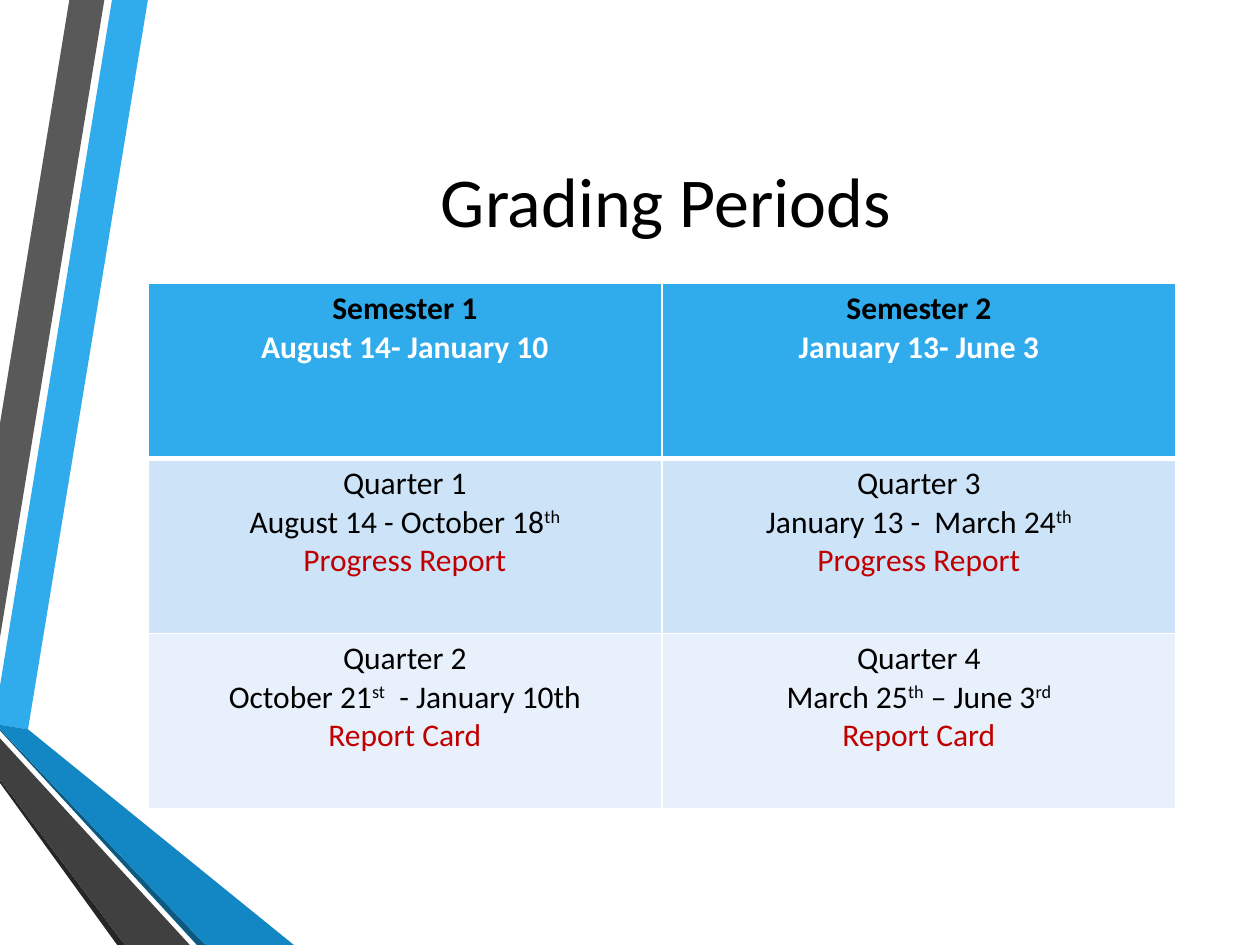
"""Build the Grading Periods slide."""
import pptx
import pptx.dml.color
import pptx.enum.text
import pptx.oxml
import pptx.oxml.ns
import pptx.util

Pt = pptx.util.Pt
COLORS = {
    "blue": "30ACEC", "grey": "595959", "black_edge": "262626",
    "blue_edge": "0C5A82", "deep_blue": "1287C3", "dark_grey": "404040",
    "pale_blue": "CDE3F8", "ice": "E8F1FB", "white": "FFFFFF",
    "black": "000000", "red": "C00000",
}
RIBBONS = [
    ("blue", [(0, 391.9), (0, 414.2), (16, 416.8), (84.5, 0), (64, 0)]),
    ("grey", [(59.6, 0), (39.6, 0), (0, 241.8), (0, 364.1)]),
    ("black_edge", [(0, 445.5), (0, 447.4), (67, 540), (71.5, 540)]),
    ("blue_edge", [(0, 416.7), (0, 417.5), (112.5, 540), (117.4, 540)]),
    ("deep_blue", [(0, 416.7), (117.4, 540), (167.9, 540), (16, 416.8), (0, 414.2)]),
    ("dark_grey", [(0, 445.5), (71.5, 540), (108.5, 540), (0, 421.9)]),
]
ROWS = [
    ("blue", True, ["black", "white"], 1, 3, [
        ["Semester 1", "August 14- January 10"],
        ["Semester 2", "January 13- June 3"]]),
    ("pale_blue", False, ["black", "black", "red"], 3, 1, [
        ["Quarter 1", "August 14 - October 18^th", "Progress Report"],
        ["Quarter 3", "January 13 -  March 24^th", "Progress Report"]]),
    ("ice", False, ["black", "black", "red"], 1, 1, [
        ["Quarter 2", "October 21^st^  - January 10th", "Report Card"],
        ["Quarter 4", "March 25^th^ – June 3^rd", "Report Card"]]),
]


def rgb(name):
    return pptx.dml.color.RGBColor.from_string(COLORS[name])


def add_text(p, text, size, color, bold=False):
    p.alignment = pptx.enum.text.PP_ALIGN.CENTER
    p.font.name = "Calibri"
    p.font.size = Pt(size)
    p.font.bold = bold
    p.font.color.rgb = rgb(color)
    for i, part in enumerate(text.split("^")):
        r = p.add_run()
        r.text = part
        if i % 2:
            r.font._element.set("baseline", "30000")


prs = pptx.Presentation()
prs.slide_width, prs.slide_height = Pt(720), Pt(540)
s = prs.slides.add_slide(prs.slide_layouts[6])

for color, points in RIBBONS:
    start, *rest = [(Pt(x), Pt(y)) for x, y in points]
    fb = s.shapes.build_freeform(*start)
    fb.add_line_segments(rest, close=True)
    sp = fb.convert_to_shape()
    sp.shadow.inherit = False
    sp.fill.solid()
    sp.fill.fore_color.rgb = rgb(color)
    sp.line.fill.background()

tf = s.shapes.add_textbox(Pt(77), Pt(36), Pt(607), Pt(156)).text_frame
tf.word_wrap = True
tf.vertical_anchor = pptx.enum.text.MSO_ANCHOR.MIDDLE
add_text(tf.paragraphs[0], "Grading Periods", 40, "black")

table = s.shapes.add_table(3, 2, Pt(84.5), Pt(162), Pt(587.5), Pt(300)).table
for i, (fill, bold, colors, top, bottom, cells) in enumerate(ROWS):
    for j, lines in enumerate(cells):
        cell = table.cell(i, j)
        tcPr = cell._tc.get_or_add_tcPr()
        for side, width in zip("LRTB", (1, 1, top, bottom)):
            tcPr.append(pptx.oxml.parse_xml(
                f'<a:ln{side} {pptx.oxml.ns.nsdecls("a")} w="{Pt(width)}"><a:solidFill>'
                f'<a:srgbClr val="{COLORS["white"]}"/></a:solidFill></a:ln{side}>'))
        cell.fill.solid()
        cell.fill.fore_color.rgb = rgb(fill)
        tf = cell.text_frame
        for k, (line, color) in enumerate(zip(lines, colors)):
            p = tf.add_paragraph() if k else tf.paragraphs[0]
            add_text(p, line, 18, color, bold)

prs.save("out.pptx")
